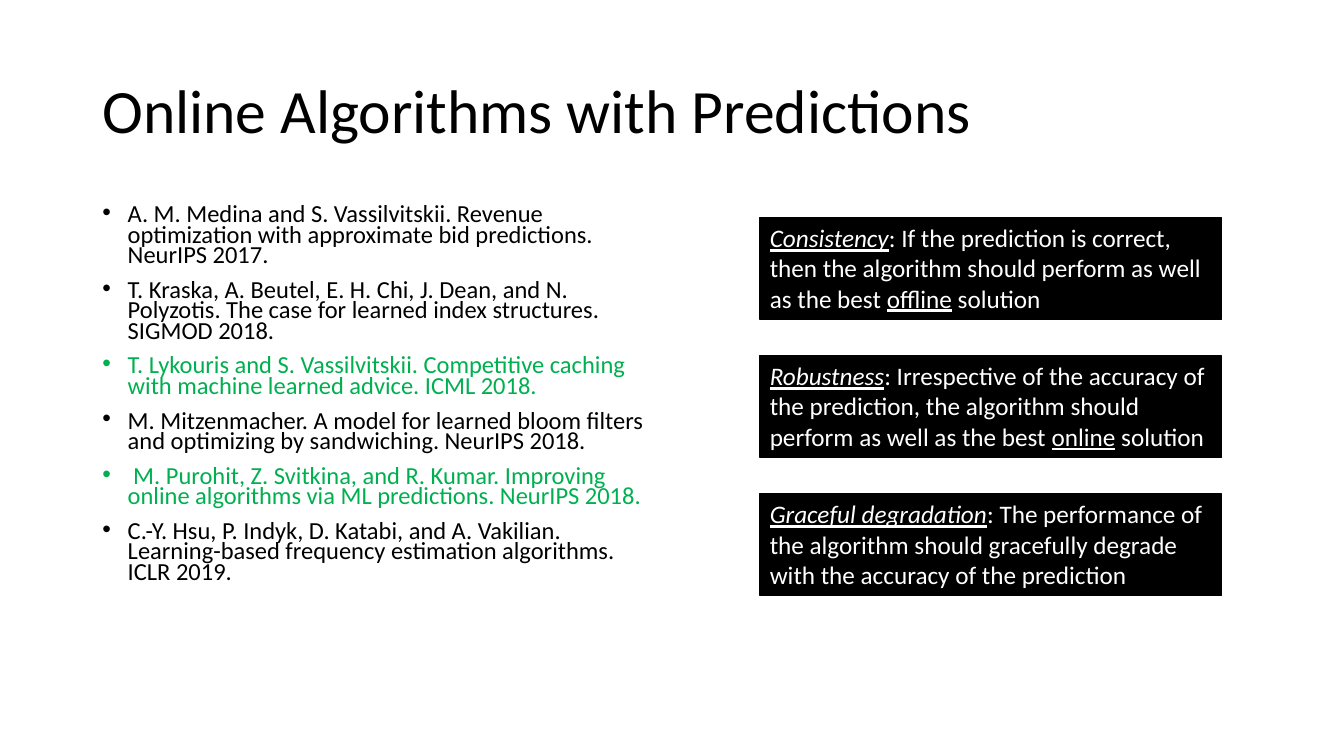
import dataclasses

import lxml.etree
import pptx
import pptx.dml.color
import pptx.enum.shapes
import pptx.enum.text
import pptx.oxml.ns
import pptx.util

Cm = pptx.util.Cm
Pt = pptx.util.Pt


@dataclasses.dataclass(frozen=True)
class Theme:
    font: str = "Calibri"
    black: str = "000000"
    white: str = "FFFFFF"
    green: str = "00B050"
    title_size: float = 44
    reference_size: float = 17.5
    property_size: float = 18


THEME = Theme()

REFERENCES = [
    ("A. M. Medina and S. Vassilvitskii. Revenue optimization with approximate bid predictions. NeurIPS 2017.", THEME.black),
    ("T. Kraska, A. Beutel, E. H. Chi, J. Dean, and N. Polyzotis. The case for learned index structures. SIGMOD 2018.", THEME.black),
    ("T. Lykouris and S. Vassilvitskii. Competitive caching with machine learned advice. ICML 2018.", THEME.green),
    ("M. Mitzenmacher. A model for learned bloom ﬁlters and optimizing by sandwiching. NeurIPS 2018.", THEME.black),
    (" M. Purohit, Z. Svitkina, and R. Kumar. Improving online algorithms via ML predictions. NeurIPS 2018.", THEME.green),
    ("C.-Y. Hsu, P. Indyk, D. Katabi, and A. Vakilian. Learning-based frequency estimation algorithms. ICLR 2019.", THEME.black),
]

TERM = {"italic": True, "underline": True}
STRESSED = {"underline": True}
PLAIN = {}

PROPERTIES = [
    [
        ("Consistency", TERM),
        (": If the prediction is correct, then the algorithm should perform as well as the best ", PLAIN),
        ("offline", STRESSED),
        (" solution", PLAIN),
    ],
    [
        ("Robustness", TERM),
        (": Irrespective of the accuracy of the prediction, the algorithm should perform as well as the best ", PLAIN),
        ("online", STRESSED),
        (" solution", PLAIN),
    ],
    [
        ("Graceful degradation", TERM),
        (": The performance of the algorithm should gracefully degrade with the accuracy of the prediction", PLAIN),
    ],
]


def apply_format(target, values):
    for name, value in values.items():
        setattr(target, name, value)


def add_span(para, text, size, color, style=PLAIN):
    span = para.add_run()
    span.text = text
    apply_format(span.font, {"name": THEME.font, "size": Pt(size), **style})
    span.font.color.rgb = pptx.dml.color.RGBColor.from_string(color)


def add_bullet(para):
    properties = para._p.get_or_add_pPr()
    apply_format_xml = {"marL": Cm(0.64), "indent": -Cm(0.64)}
    for name, value in apply_format_xml.items():
        properties.set(name, str(int(value)))
    font = lxml.etree.SubElement(properties, pptx.oxml.ns.qn("a:buFont"))
    font.set("typeface", "Arial")
    bullet = lxml.etree.SubElement(properties, pptx.oxml.ns.qn("a:buChar"))
    bullet.set("char", "•")


def add_text_frame(page, left, top, width, height, anchor):
    box = page.shapes.add_textbox(Cm(left), Cm(top), Cm(width), Cm(height))
    apply_format(box.text_frame, {"word_wrap": True, "vertical_anchor": anchor})
    return box.text_frame


def add_title(page, text):
    frame = add_text_frame(page, 2.33, 1.01, 29.21, 3.68, pptx.enum.text.MSO_ANCHOR.MIDDLE)
    para = frame.paragraphs[0]
    para.line_spacing = 0.9
    add_span(para, text, THEME.title_size, THEME.black)


def add_references(page, references):
    frame = add_text_frame(page, 2.33, 5.07, 14.4, 12.09, pptx.enum.text.MSO_ANCHOR.TOP)
    for index, (text, color) in enumerate(references):
        para = frame.add_paragraph() if index else frame.paragraphs[0]
        apply_format(para, {"line_spacing": 0.7, "space_before": Pt(10)})
        add_bullet(para)
        add_span(para, text, THEME.reference_size, color)


def add_property_box(page, top, spans):
    box = page.shapes.add_shape(
        pptx.enum.shapes.MSO_SHAPE.RECTANGLE, Cm(19.15), Cm(top), Cm(11.63), Cm(2.57)
    )
    black = pptx.dml.color.RGBColor.from_string(THEME.black)
    box.shadow.inherit = False
    box.fill.solid()
    box.fill.fore_color.rgb = black
    box.line.color.rgb = black
    box.line.width = Pt(1)
    apply_format(box.text_frame, {
        "word_wrap": True,
        "vertical_anchor": pptx.enum.text.MSO_ANCHOR.TOP,
        "auto_size": pptx.enum.text.MSO_AUTO_SIZE.SHAPE_TO_FIT_TEXT,
    })
    para = box.text_frame.paragraphs[0]
    para.alignment = pptx.enum.text.PP_ALIGN.LEFT
    for text, style in spans:
        add_span(para, text, THEME.property_size, THEME.white, style)


def main():
    deck = pptx.Presentation()
    apply_format(deck, {"slide_width": Cm(33.87), "slide_height": Cm(19.05)})
    page = deck.slides.add_slide(deck.slide_layouts[6])
    add_title(page, "Online Algorithms with Predictions")
    add_references(page, REFERENCES)
    for index, spans in enumerate(PROPERTIES):
        add_property_box(page, 5.48 + 3.48 * index, spans)
    deck.save("out.pptx")


if __name__ == "__main__":
    main()
